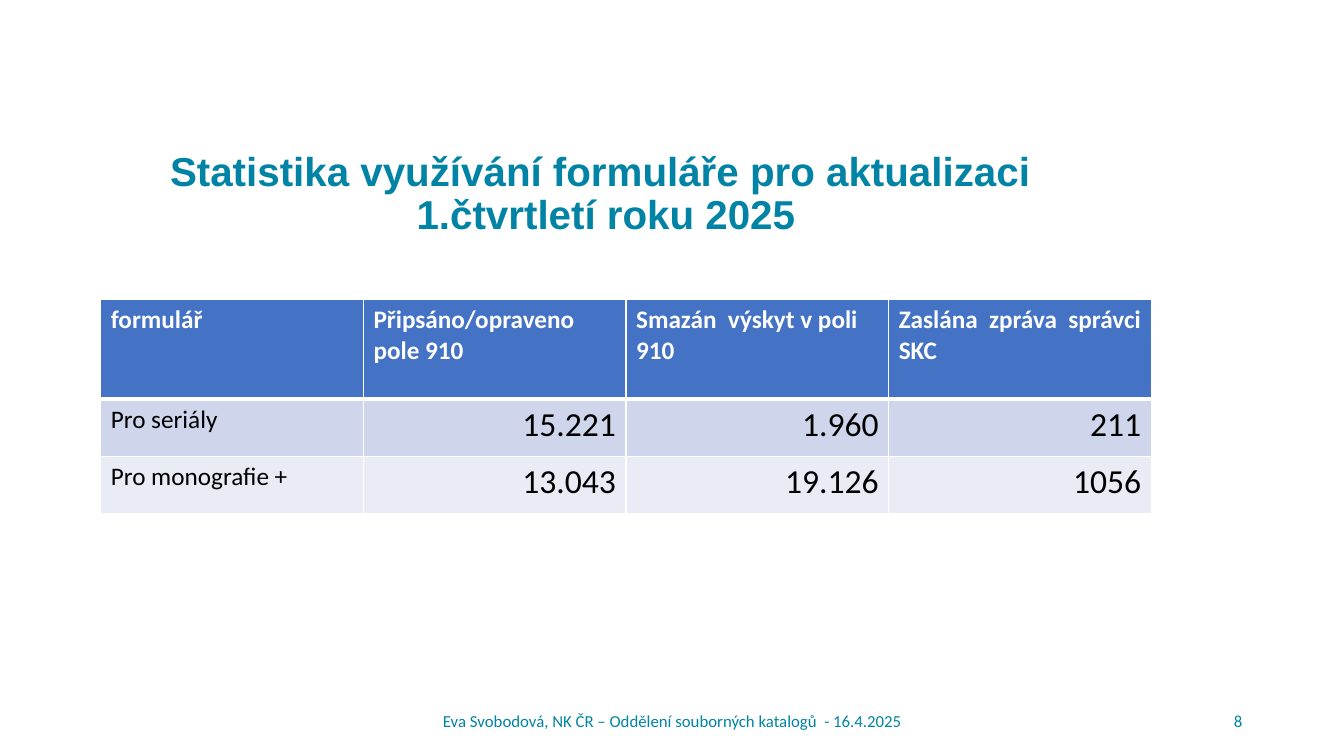
from lxml import etree
from pptx import Presentation
from pptx.dml.color import RGBColor
from pptx.enum.text import MSO_ANCHOR as Anchor, PP_ALIGN as Align
from pptx.oxml.ns import qn
from pptx.util import Inches, Pt

COLORS = {
    "teal": "0083A5", "white": "FFFFFF", "black": "000000",
    "header": "4472C4", "band_dark": "CFD5EA", "band_light": "E9EBF5",
}
ROWS = [
    ["formulář", "Připsáno/opraveno pole 910", "Smazán  výskyt v poli 910",
     "Zaslána  zpráva  správci SKC"],
    ["Pro seriály", "15.221", "1.960", "211"],
    ["Pro monografie +", "13.043", "19.126", "1056"],
]
ROW_FILLS = ["header", "band_dark", "band_light"]
ROW_HEIGHTS = [0.99, 0.57, 0.57]


def write(tf, text, color, align=Align.LEFT, **font):
    p = tf.paragraphs[0]
    p.alignment = align
    r = p.add_run()
    r.text = text
    for name, value in {"name": "Calibri", "bold": False, **font}.items():
        setattr(r.font, name, value)
    r.font.color.rgb = RGBColor.from_string(COLORS[color])
    return p


def add_title(slide, x, y, w, h):
    sp = slide.shapes.title
    sp.left, sp.top, sp.width, sp.height = map(Inches, (x, y, w, h))
    tf = sp.text_frame
    tf.word_wrap = True
    tf.vertical_anchor = Anchor.TOP
    p = write(tf, "Statistika využívání formuláře pro aktualizaci  1.čtvrtletí roku 2025",
              "teal", Align.CENTER, name="Arial", size=Pt(28.8), bold=True)
    p.line_spacing = 0.9


def set_borders(cell, top, bottom):
    tc_pr = cell._tc.get_or_add_tcPr()
    for side, width in {"L": 1, "R": 1, "T": top, "B": bottom}.items():
        ln = etree.SubElement(tc_pr, qn(f"a:ln{side}"), w=str(Pt(width)))
        fill = etree.SubElement(ln, qn("a:solidFill"))
        etree.SubElement(fill, qn("a:srgbClr"), val=COLORS["white"])


def add_statistics(slide, x, y, w):
    box = map(Inches, (x, y, w, sum(ROW_HEIGHTS)))
    table = slide.shapes.add_table(len(ROWS), len(ROWS[0]), *box).table
    for i, values in enumerate(ROWS):
        table.rows[i].height = Inches(ROW_HEIGHTS[i])
        is_header = i == 0
        for j, text in enumerate(values):
            cell = table.cell(i, j)
            set_borders(cell, top=3 if i == 1 else 1, bottom=3 if is_header else 1)
            cell.fill.solid()
            cell.fill.fore_color.rgb = RGBColor.from_string(COLORS[ROW_FILLS[i]])
            is_number = not is_header and j > 0
            write(cell.text_frame, text, "white" if is_header else "black",
                  Align.RIGHT if is_number else Align.LEFT,
                  size=Pt(24 if is_number else 18), bold=is_header)


def add_footer(slide, x, y, w, h):
    number_w = 1.12
    for text, left, width, align in [
        ("Eva Svobodová, NK ČR – Oddělení souborných katalogů  - 16.4.2025",
         x, w, Align.CENTER),
        ("8", x + w - number_w, number_w, Align.RIGHT),
    ]:
        tf = slide.shapes.add_textbox(*map(Inches, (left, y, width, h))).text_frame
        tf.word_wrap = True
        tf.vertical_anchor = Anchor.MIDDLE
        write(tf, text, "teal", align, size=Pt(12))


def main():
    prs = Presentation()
    prs.slide_width, prs.slide_height = Inches(13.33), Inches(7.5)
    slide = prs.slides.add_slide(prs.slide_layouts.get_by_name("Title Only"))
    add_title(slide, 0.92, 1.45, 10.18, 0.67)
    add_footer(slide, 0.92, 6.95, 11.5, 0.4)
    add_statistics(slide, 1, 2.97, 10.42)
    prs.save("out.pptx")


if __name__ == "__main__":
    main()
